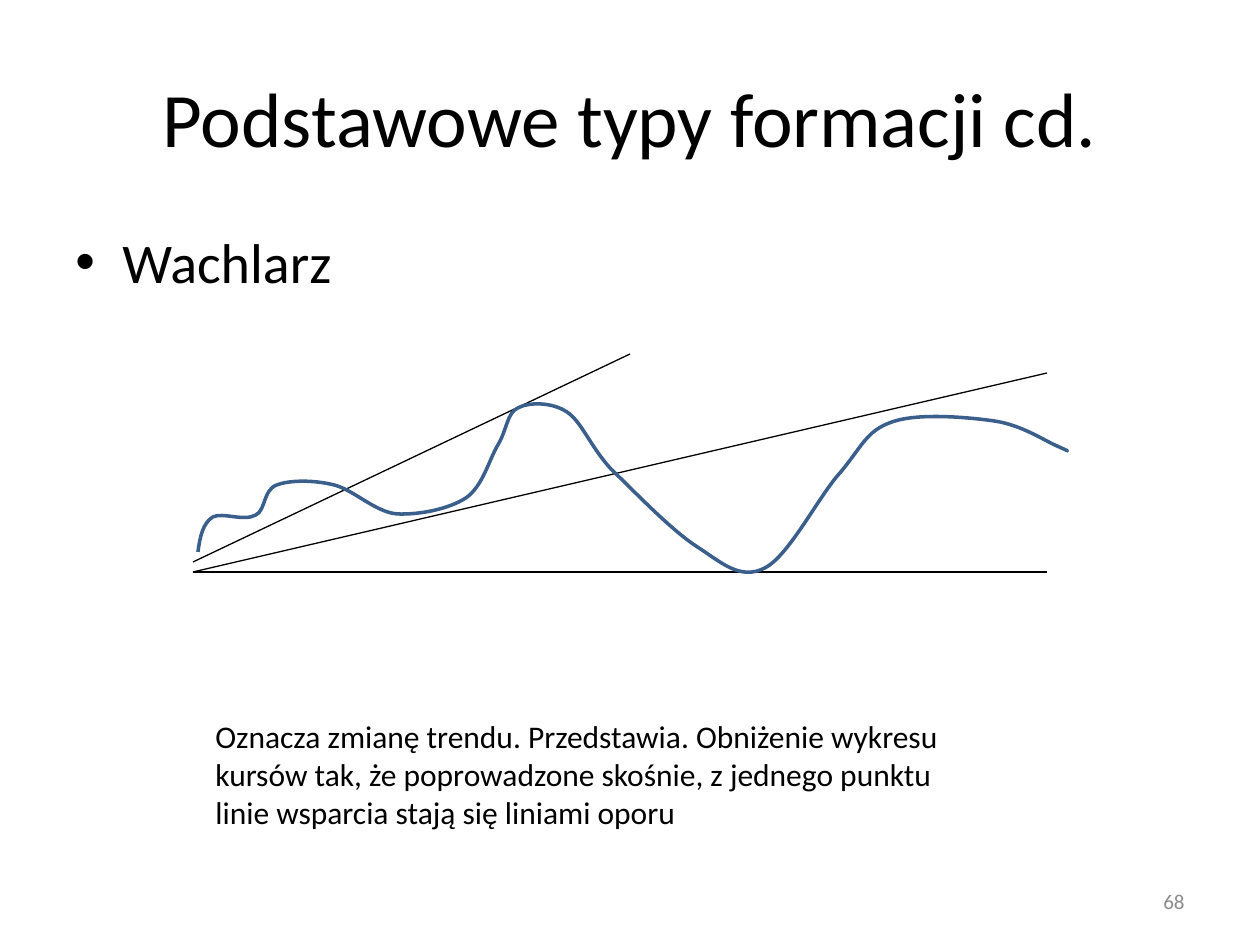
from lxml import etree
from pptx import Presentation
from pptx.dml.color import RGBColor
from pptx.enum.shapes import MSO_CONNECTOR
from pptx.enum.text import MSO_ANCHOR, PP_ALIGN
from pptx.oxml.ns import qn
from pptx.util import Inches, Pt

STRAIGHT = MSO_CONNECTOR.STRAIGHT
TOP, MIDDLE = MSO_ANCHOR.TOP, MSO_ANCHOR.MIDDLE
LEFT, CENTER, RIGHT = PP_ALIGN.LEFT, PP_ALIGN.CENTER, PP_ALIGN.RIGHT

EMU_PER_PX = Inches(1) / 126
FONT = "Calibri"
BLACK, GRAY, BLUE = "000000", "8C8C8C", "3A5F8C"


def px(n):
    return round(n * EMU_PER_PX)


def color(value):
    return RGBColor.from_string(value)


class SlideBuilder:
    def __init__(self, slide):
        self.slide = slide
        self.shapes = slide.shapes

    def text(self, text, x, y, w, h, size, fill=BLACK, align=LEFT, anchor=TOP):
        tf = self.shapes.add_textbox(px(x), px(y), px(w), px(h)).text_frame
        tf.word_wrap = True
        tf.vertical_anchor = anchor
        tf.text = text
        p = tf.paragraphs[0]
        p.alignment = align
        font = p.runs[0].font
        font.name, font.size = FONT, Pt(size)
        font.color.rgb = color(fill)
        return p

    def bullet(self, text, x, y, w, h, size, indent):
        pPr = self.text(text, x, y, w, h, size)._p.get_or_add_pPr()
        pPr.set("marL", str(px(indent)))
        pPr.set("indent", str(-px(indent)))
        etree.SubElement(pPr, qn("a:buFont")).set("typeface", "Arial")
        etree.SubElement(pPr, qn("a:buChar")).set("char", "•")

    def line(self, start, end, width=0.75):
        sp = self.shapes.add_connector(STRAIGHT, *map(px, start + end))
        sp.line.color.rgb = color(BLACK)
        sp.line.width = Pt(width)
        etree.SubElement(sp._element.spPr, qn("a:effectLst"))

    def curve(self, points, stroke, width):
        """Draw a Bezier chain: a start point, then three points per segment."""
        builder = self.shapes.build_freeform(*points[0], scale=EMU_PER_PX)
        builder.add_line_segments(points[1:], close=False)
        sp = builder.convert_to_shape()
        sp.shadow.inherit = False
        sp.fill.background()
        sp.line.color.rgb = color(stroke)
        sp.line.width = Pt(width)
        # Turn each three line segments into one cubic segment
        outline = next(sp._element.iter(qn("a:path")))
        steps = outline.findall(qn("a:lnTo"))
        for i in range(0, len(steps), 3):
            cubic = etree.SubElement(outline, qn("a:cubicBezTo"))
            for step in steps[i:i + 3]:
                cubic.append(step[0])
                outline.remove(step)


PRICE_CURVE = [
    (198, 552),
    (200, 537), (203, 523), (213, 517),
    (223, 512), (244, 522), (256, 515),
    (266, 510), (263, 490), (277, 485),
    (290, 480), (314, 480), (334, 485),
    (354, 490), (375, 512), (397, 514),
    (420, 515), (449, 509), (466, 498),
    (483, 486), (489, 460), (498, 445),
    (507, 430), (507, 413), (518, 408),
    (529, 402), (552, 402), (567, 412),
    (582, 422), (590, 446), (611, 469),
    (633, 490), (670, 529), (696, 546),
    (721, 562), (740, 581), (765, 568),
    (789, 556), (819, 496), (840, 473),
    (862, 447), (866, 431), (892, 422),
    (917, 413), (966, 417), (994, 421),
    (1022, 425), (1045, 441), (1057, 446),
    (1068, 451), (1068, 451), (1067, 451),
]
FAN_LINES = [
    ((193, 562), (630, 354)),
    ((193, 572), (1047, 373)),
    ((193, 572), (1047, 572)),
]


def main():
    prs = Presentation()
    prs.slide_width, prs.slide_height = Inches(10), Inches(7.5)
    s = SlideBuilder(prs.slides.add_slide(prs.slide_layouts[6]))

    # Page number, title and bullet
    s.text("68", 903, 876, 294, 50, 12, GRAY, RIGHT, MIDDLE)
    s.text("Podstawowe typy formacji cd.", 63, 38, 1134, 158, 44,
           align=CENTER, anchor=MIDDLE)
    s.bullet("Wachlarz", 63, 221, 1134, 624, 32, indent=47)

    # Fan of support lines with the price curve
    for start, end in FAN_LINES:
        s.line(start, end)
    s.curve(PRICE_CURVE, BLUE, 2)

    # Explanation
    s.text("Oznacza zmianę trendu. Przedstawia. Obniżenie wykresu kursów tak, "
           "że poprowadzone skośnie, z jednego punktu linie wsparcia stają się "
           "liniami oporu", 203, 711, 774, 126, 18)

    prs.save("out.pptx")


if __name__ == "__main__":
    main()
